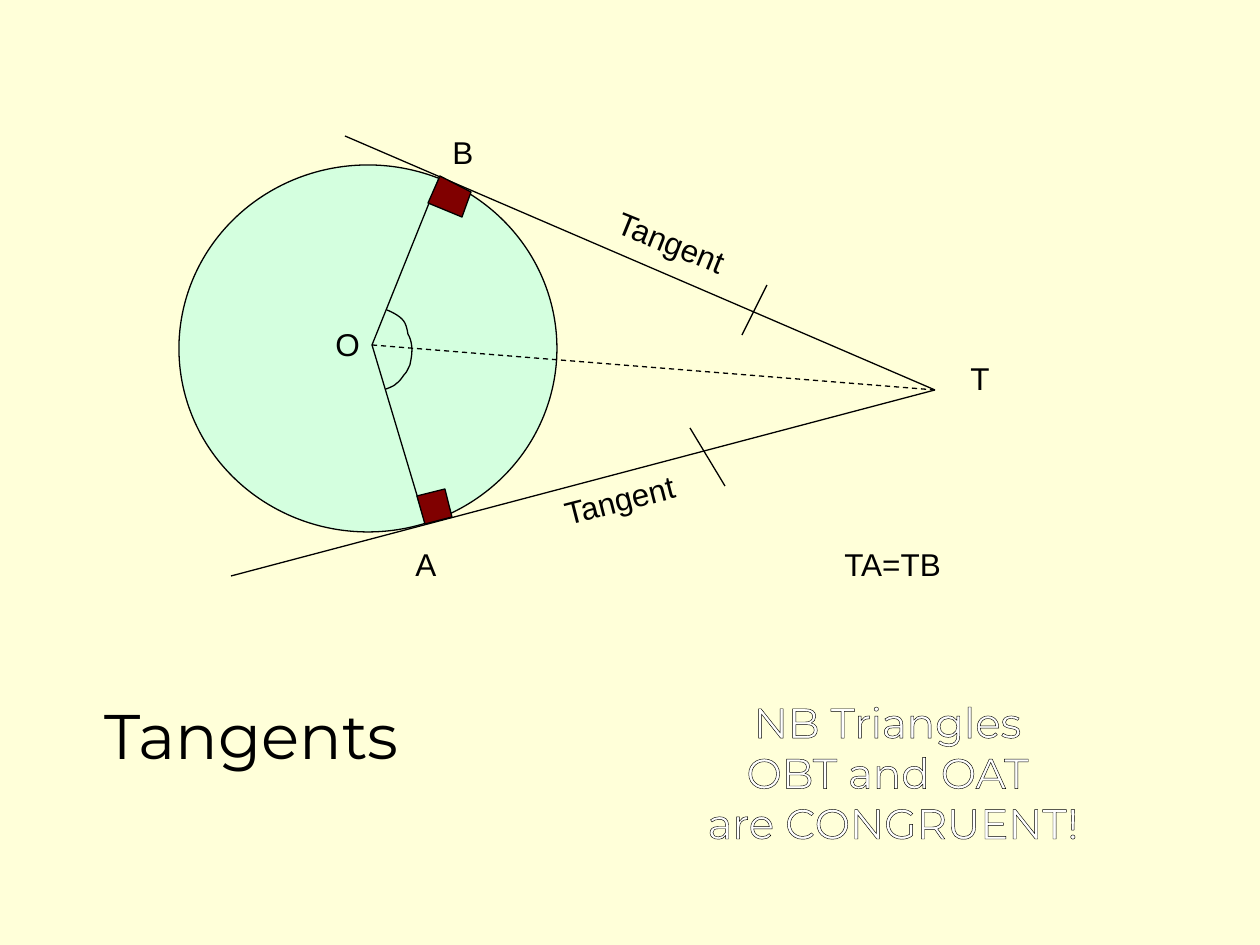
from lxml.etree import SubElement
from pptx import Presentation
from pptx.dml.color import RGBColor
from pptx.enum.dml import MSO_LINE
from pptx.enum.shapes import MSO_CONNECTOR, MSO_SHAPE
from pptx.enum.text import MSO_ANCHOR, MSO_AUTO_SIZE, PP_ALIGN
from pptx.oxml.ns import qn
from pptx.util import Pt

PX = 914400 / 126
BLACK, WHITE, CREAM, CYAN, MAROON = "000000", "FFFFFF", "FFFFD9", "00FFFF", "800000"

# Content, in px
TITLE = ("Tangents", (91, 690, 321, 200))
CONCLUSION = (["NB Triangles ", "OBT and OAT ", "are CONGRUENT!"], (690, 690, 406, 178))
CIRCLE, CIRCLE_OPACITY = (179, 165, 378, 367), 17
O, A, B, T = (372, 345), (425, 522), (440, 176), (935, 390)
SOLID_LINES = [((345, 136), T), (T, (231, 576)), (B, O), (O, A)]
TICKS = [((767, 285), (742, 335)), ((690, 428), (725, 486))]
RIGHT_ANGLES = [
    [(471, 192), (462, 217), (428, 203), B],
    [(425, 524), (452, 517), (445, 489), (417, 496)],
]
ANGLE_START = (387, 310)
ANGLE_CURVES = [  # two control points and an end point each
    ((392, 312), (398, 315), (402, 319)),
    ((406, 323), (407, 328), (408, 334)),
    ((411, 339), (412, 345), (412, 350)),
    ((412, 355), (411, 360), (410, 365)),
    ((408, 369), (407, 372), (404, 375)),
    ((402, 378), (398, 383), (397, 383)),
    ((394, 386), (393, 386), (391, 387)),
    ((389, 388), (386, 389), (386, 389)),
]
LABEL_HEIGHT = 50
LABELS = [  # text, left, top, width, rotation
    ("T", 958, 353, 44, 0),
    ("A", 403, 539, 47, 0),
    ("B", 440, 127, 47, 0),
    ("O", 323, 319, 50, 0),
    ("TA=TB", 832, 539, 125, 0),
    ("Tangent", 549, 474, 141, 345.5),
    ("Tangent", 601, 217, 141, 22),
]


def emu(*lengths):
    return [round(length * PX) for length in lengths]


def rgb(colour):
    return RGBColor.from_string(colour)


def set_all(target, values):
    for name, value in values.items():
        setattr(target, name, value)


def style_outline(line):
    line.color.rgb = rgb(BLACK)
    line.width = Pt(0.75)


def style_shape(shape, fill=None):
    shape.shadow.inherit = False
    style_outline(shape.line)
    if fill:
        shape.fill.solid()
        shape.fill.fore_color.rgb = rgb(fill)
    else:
        shape.fill.background()


def add_line(shapes, start, end, dash=None):
    line = shapes.add_connector(MSO_CONNECTOR.STRAIGHT, *emu(*start, *end))
    style_outline(line.line)
    line.line.dash_style = dash
    SubElement(line._element.spPr, qn("a:effectLst"))


def add_outline(shapes, points, close, fill=None):
    start, *others = [emu(*point) for point in points]
    builder = shapes.build_freeform(*start)
    builder.add_line_segments(others, close=close)
    style_shape(builder.convert_to_shape(), fill)


def curve_points(start, curves, steps=6):
    points = [start]
    for first, second, end in curves:
        corners = (points[-1], first, second, end)
        for step in range(1, steps + 1):
            t = step / steps
            weights = ((1 - t) ** 3, 3 * t * (1 - t) ** 2, 3 * t * t * (1 - t), t ** 3)
            points.append(tuple(sum(w * c[axis] for w, c in zip(weights, corners))
                                for axis in (0, 1)))
    return points


def write(shape, lines, font, size, colour, align, fit=MSO_AUTO_SIZE.NONE, outlined=False):
    frame = shape.text_frame
    frame.text = "\n".join(lines)
    set_all(frame, {"auto_size": fit, "word_wrap": False, "vertical_anchor": MSO_ANCHOR.TOP})
    for paragraph in frame.paragraphs:
        paragraph.alignment = align
        run = paragraph.runs[0]
        set_all(run.font, {"name": font, "size": Pt(size)})
        run.font.color.rgb = rgb(colour)
        if outlined:
            edge = SubElement(run._r.get_or_add_rPr(), qn("a:ln"), w=str(Pt(0.75)))
            SubElement(SubElement(edge, qn("a:solidFill")), qn("a:srgbClr"), val=BLACK)
            run._r.rPr.insert(0, edge)


def main():
    deck = Presentation()
    deck.slide_width, deck.slide_height = emu(1260, 945)
    slide = deck.slides.add_slide(deck.slide_layouts[5])
    slide.background.fill.solid()
    slide.background.fill.fore_color.rgb = rgb(CREAM)
    shapes = slide.shapes

    # Title
    title_text, title_place = TITLE
    set_all(shapes.title, dict(zip(("left", "top", "width", "height"), emu(*title_place))))
    write(shapes.title, [title_text], "Montserrat", 36, BLACK, PP_ALIGN.CENTER, outlined=True)

    # Circle, see-through
    circle = shapes.add_shape(MSO_SHAPE.OVAL, *emu(*CIRCLE))
    style_shape(circle, CYAN)
    circle_colour = circle._element.spPr.find(qn("a:solidFill"))[0]
    SubElement(circle_colour, qn("a:alpha"), val=str(CIRCLE_OPACITY * 1000))

    # Tangents, radii, right angles and the line from O to T
    for start, end in SOLID_LINES:
        add_line(shapes, start, end)
    for corners in RIGHT_ANGLES:
        add_outline(shapes, corners, True, MAROON)
    add_line(shapes, O, T, MSO_LINE.DASH)

    # Angle at O and equal-length ticks
    add_outline(shapes, curve_points(ANGLE_START, ANGLE_CURVES), False)
    for start, end in TICKS:
        add_line(shapes, start, end)

    # Labels
    for text, left, top, width, rotation in LABELS:
        label = shapes.add_textbox(*emu(left, top, width, LABEL_HEIGHT))
        label.rotation = rotation
        align = PP_ALIGN.CENTER if rotation else PP_ALIGN.LEFT
        write(label, [text], "Arial", 18, BLACK, align, MSO_AUTO_SIZE.SHAPE_TO_FIT_TEXT)

    # Conclusion
    lines, place = CONCLUSION
    write(shapes.add_textbox(*emu(*place)), lines, "Montserrat", 24, WHITE,
          PP_ALIGN.CENTER, outlined=True)

    deck.save("out.pptx")


if __name__ == "__main__":
    main()
